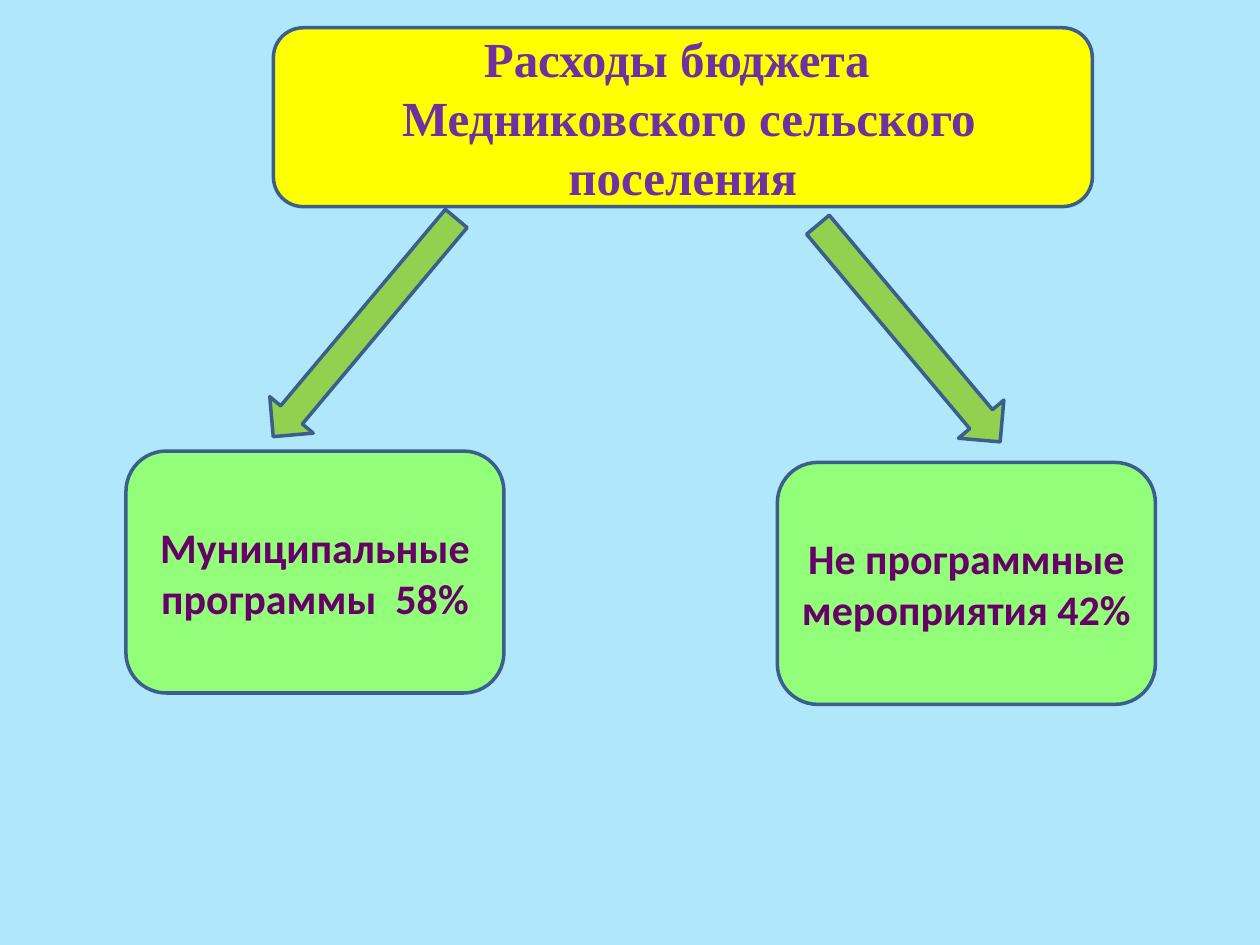
import pptx
import pptx.util
import pptx.dml.color
import pptx.enum.shapes
import pptx.enum.text

Inches = pptx.util.Inches
RGBColor = pptx.dml.color.RGBColor
Shapes = pptx.enum.shapes.MSO_SHAPE

SKY = RGBColor(0xB0, 0xE7, 0xFA)
OUTLINE = RGBColor(0x3A, 0x5F, 0x8C)
YELLOW = RGBColor(0xFF, 0xFF, 0x00)
MINT = RGBColor(0x93, 0xFE, 0x7A)
GREEN = RGBColor(0x92, 0xD0, 0x50)
VIOLET = RGBColor(0x70, 0x30, 0xA0)
PLUM = RGBColor(0x66, 0x00, 0x66)

TITLE_FONT = {"name": "Times New Roman", "size": pptx.util.Pt(28), "bold": True}
SHARE_FONT = {"name": "Calibri", "size": pptx.util.Pt(24), "bold": True}


def add_outlined_shape(page, kind, bounds, fill):
    """Add a filled preset shape with the common outline."""
    shape = page.shapes.add_shape(kind, *map(Inches, bounds))
    shape.shadow.inherit = False
    shape.fill.solid()
    shape.fill.fore_color.rgb = fill
    shape.line.color.rgb = OUTLINE
    shape.line.width = pptx.util.Pt(2)
    return shape


def add_box(page, bounds, fill, lines, font, color):
    """Add a rounded box with one centred paragraph per line."""
    box = add_outlined_shape(page, Shapes.ROUNDED_RECTANGLE, bounds, fill)
    frame = box.text_frame
    frame.word_wrap = True
    frame.vertical_anchor = pptx.enum.text.MSO_ANCHOR.MIDDLE
    for index, line in enumerate(lines):
        para = frame.add_paragraph() if index else frame.paragraphs[0]
        para.alignment = pptx.enum.text.PP_ALIGN.CENTER
        span = para.add_run()
        span.text = line
        for name, value in font.items():
            setattr(span.font, name, value)
        span.font.color.rgb = color


def add_arrow(page, bounds, rotation):
    """Add a block arrow turned from pointing straight down."""
    arrow = add_outlined_shape(page, Shapes.DOWN_ARROW, bounds, GREEN)
    arrow.rotation = rotation


def main():
    """Build the budget expenditure slide and save it."""
    deck = pptx.Presentation()
    deck.slide_width, deck.slide_height = Inches(10), Inches(7.5)
    page = deck.slides.add_slide(deck.slide_layouts[6])
    page.background.fill.solid()
    page.background.fill.fore_color.rgb = SKY

    add_arrow(page, (6.98, 1.52, 0.47, 2.25), 320)
    add_arrow(page, (2.67, 1.47, 0.45, 2.26), 40)

    shares = [
        (1, 3.58, "Муниципальные программы  58%"),
        (6.17, 3.67, "Не программные мероприятия 42%"),
    ]
    for left, top, label in shares:
        add_box(page, (left, top, 3, 1.92), MINT, [label], SHARE_FONT, PLUM)

    title = ["Расходы бюджета ", " Медниковского сельского поселения"]
    add_box(page, (2.17, 0.22, 6.5, 1.42), YELLOW, title, TITLE_FONT, VIOLET)

    deck.save("out.pptx")


if __name__ == "__main__":
    main()
